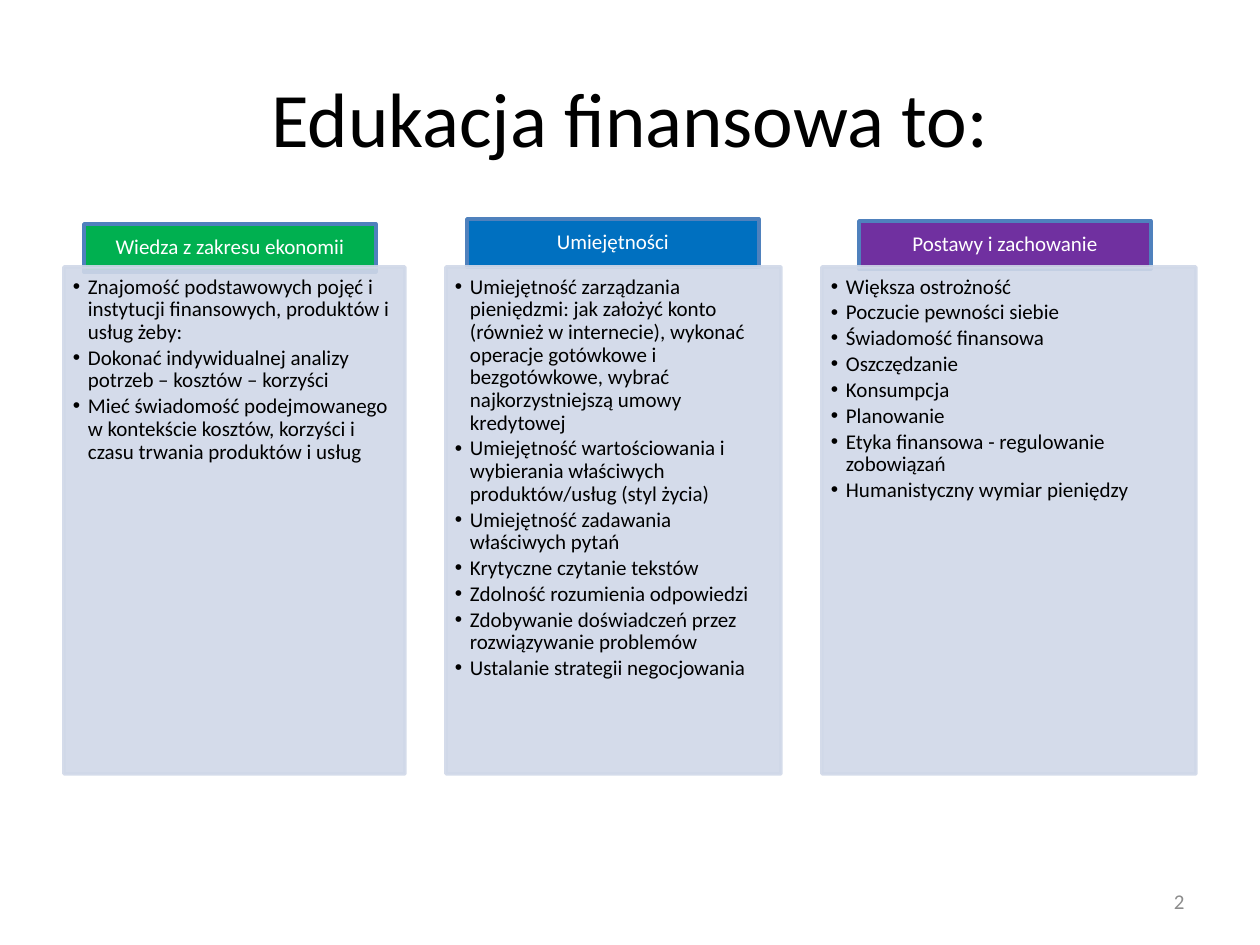
from dataclasses import dataclass

from lxml import etree
from pptx import Presentation
from pptx import util as u
from pptx.dml.color import RGBColor
from pptx.enum import shapes, text
from pptx.oxml.ns import qn

SCALE = u.Inches(1) / 126


@dataclass(frozen=True)
class Theme:
    font: str = "Calibri"
    ink: str = "000000"
    light: str = "FFFFFF"
    mute: str = "8C8C8C"
    edge: str = "4F81BD"
    panel: str = "D0D8E8"
    alpha: int = 90
    big: int = 44
    small: int = 12
    line: int = 2


THEME = Theme()

# header fill, header left and top, panel left and width, heading, points
COLUMNS = [
    ("00B050", 84, 224, 64, 341, "Wiedza z zakresu ekonomii", [
        "Znajomość podstawowych pojęć i instytucji finansowych, produktów i usług żeby:",
        "Dokonać indywidualnej analizy potrzeb – kosztów – korzyści",
        "Mieć świadomość podejmowanego w kontekście kosztów, korzyści i czasu trwania "
        "produktów i usług",
    ]),
    ("0070C0", 467, 219, 446, 335, "Umiejętności", [
        "Umiejętność zarządzania pieniędzmi: jak założyć konto (również w internecie), "
        "wykonać operacje gotówkowe i bezgotówkowe, wybrać najkorzystniejszą umowy kredytowej",
        "Umiejętność wartościowania i wybierania właściwych produktów/usług (styl życia)",
        "Umiejętność zadawania właściwych pytań",
        "Krytyczne czytanie tekstów",
        "Zdolność rozumienia odpowiedzi",
        "Zdobywanie doświadczeń przez rozwiązywanie problemów",
        "Ustalanie strategii negocjowania",
    ]),
    ("7030A0", 859, 221, 822, 374, "Postawy i zachowanie", [
        "Większa ostrożność",
        "Poczucie pewności siebie",
        "Świadomość finansowa",
        "Oszczędzanie",
        "Konsumpcja",
        "Planowanie",
        "Etyka finansowa - regulowanie zobowiązań",
        "Humanistyczny wymiar pieniędzy",
    ]),
]


def px(n):
    return u.Emu(round(n * SCALE))


def rgb(code):
    return RGBColor.from_string(code)


def write(frame, lines, size, color, align, anchor):
    frame.word_wrap = True
    frame.vertical_anchor = anchor
    frame.text = "\n".join(lines)
    for para in frame.paragraphs:
        para.alignment = align
        for run in para.runs:
            run.font.name = THEME.font
            run.font.size = u.Pt(size)
            run.font.color.rgb = rgb(color)


def inset(frame, left, top, right, bottom):
    frame.margin_left, frame.margin_top = px(left), px(top)
    frame.margin_right, frame.margin_bottom = px(right), px(bottom)


def label(slide, box, words, size, color, align):
    frame = slide.shapes.add_textbox(*map(px, box)).text_frame
    write(frame, [words], size, color, align, text.MSO_ANCHOR.MIDDLE)


def block(slide, box, fill, edge):
    shape = slide.shapes.add_shape(shapes.MSO_SHAPE.RECTANGLE, *map(px, box))
    shape.shadow.inherit = False
    shape.fill.solid()
    shape.fill.fore_color.rgb = rgb(fill)
    shape.line.color.rgb = rgb(edge)
    shape.line.width = u.Pt(THEME.line)
    return shape


def fade(shape):
    """Make the fill and the line slightly transparent."""
    for color in shape._element.spPr.iter(qn("a:srgbClr")):
        etree.SubElement(color, qn("a:alpha"), val=str(THEME.alpha * 1000))


def bullet(para):
    props = para._p.get_or_add_pPr()
    props.set("marL", str(px(15)))
    props.set("indent", str(-px(15)))
    etree.SubElement(props, qn("a:buFont"), typeface="Arial")
    etree.SubElement(props, qn("a:buChar"), char="•")
    para.line_spacing = 0.9
    para.space_after = u.Pt(1.8)


def header(slide, box, fill, words):
    frame = block(slide, box, fill, THEME.edge).text_frame
    inset(frame, 11, 6, 11, 6)
    write(frame, [words], THEME.small, THEME.light,
          text.PP_ALIGN.CENTER, text.MSO_ANCHOR.MIDDLE)
    frame.paragraphs[0].line_spacing = 0.9


def panel(slide, box, points):
    shape = block(slide, box, THEME.panel, THEME.panel)
    fade(shape)
    frame = shape.text_frame
    inset(frame, 9, 9, 11, 13)
    write(frame, points, THEME.small, THEME.ink,
          text.PP_ALIGN.LEFT, text.MSO_ANCHOR.TOP)
    for para in frame.paragraphs:
        bullet(para)


def main():
    deck = Presentation()
    deck.slide_width, deck.slide_height = px(1260), px(945)
    slide = deck.slides.add_slide(deck.slide_layouts[6])
    label(slide, (63, 38, 1134, 157), "Edukacja finansowa to:",
          THEME.big, THEME.ink, text.PP_ALIGN.CENTER)
    for fill, left, top, side, width, head, points in COLUMNS:
        header(slide, (left, top, 292, 48), fill, head)
        panel(slide, (side, 267, width, 507), points)
    label(slide, (903, 876, 294, 50), "2",
          THEME.small, THEME.mute, text.PP_ALIGN.RIGHT)
    deck.save("out.pptx")


if __name__ == "__main__":
    main()
